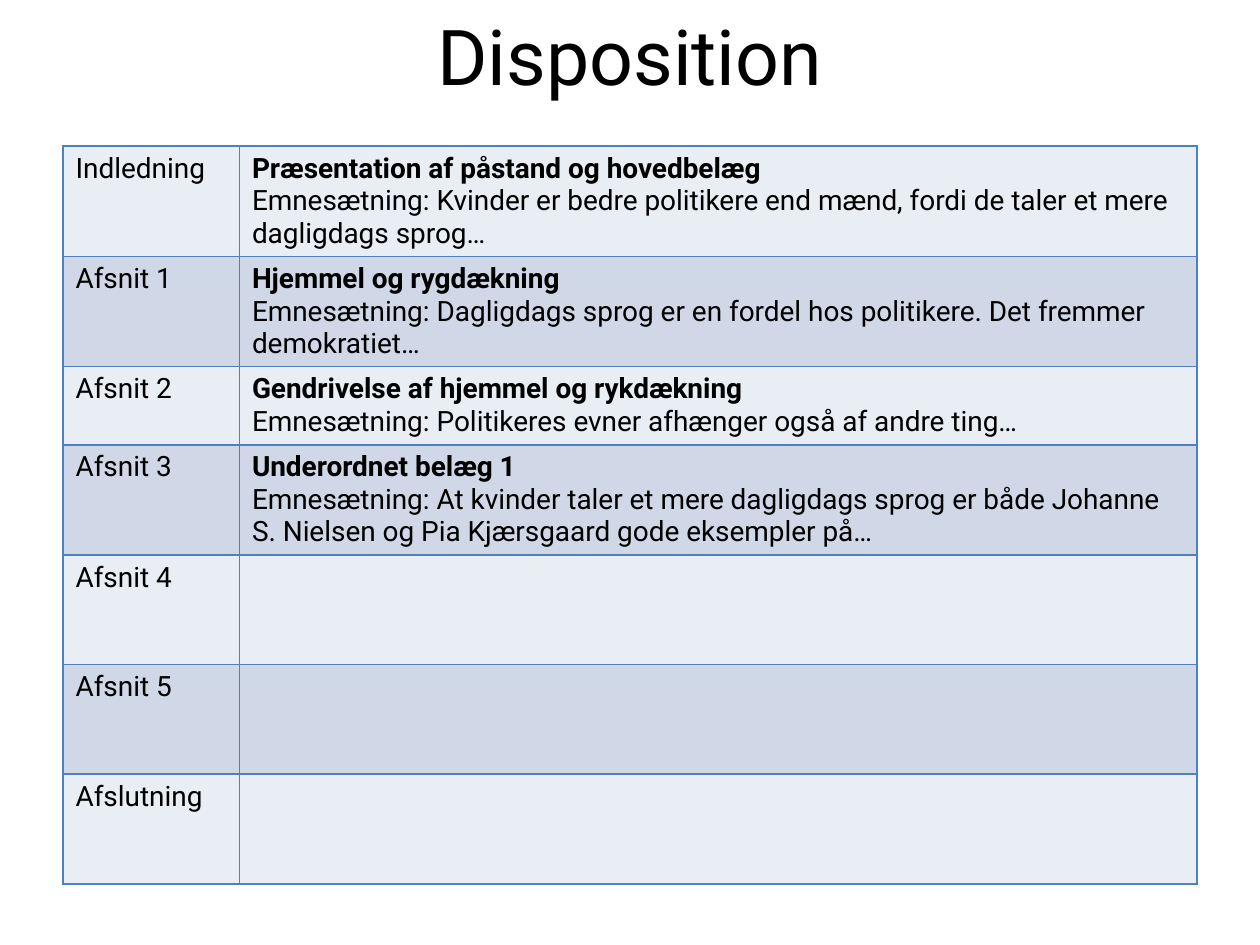
from pptx import Presentation
from pptx.dml.color import RGBColor
from pptx.enum.text import MSO_ANCHOR, PP_ALIGN
from pptx.oxml import parse_xml
from pptx.oxml.ns import nsdecls
from pptx.util import Inches, Pt

MIDDLE = MSO_ANCHOR.MIDDLE
CENTER = PP_ALIGN.CENTER
TITLE_ONLY = 5

FONT = "Roboto"
BLACK = RGBColor(0x00, 0x00, 0x00)
BORDER = RGBColor(0x4F, 0x81, 0xBD)
BANDS = (RGBColor(0xE9, 0xED, 0xF4), RGBColor(0xD0, 0xD8, 0xE8))

COLUMN_WIDTHS = (1.4, 7.6)
TALL_ROW, SHORT_ROW = 0.87, 0.62

# Section, row height, heading, topic sentence
SECTIONS = [
    ("Indledning", TALL_ROW, "Præsentation af påstand og hovedbelæg",
     "Emnesætning: Kvinder er bedre politikere end mænd, fordi de taler et mere dagligdags sprog…"),
    ("Afsnit 1", TALL_ROW, "Hjemmel og rygdækning",
     "Emnesætning: Dagligdags sprog er en fordel hos politikere. Det fremmer demokratiet…"),
    ("Afsnit 2", SHORT_ROW, "Gendrivelse af hjemmel og rykdækning",
     "Emnesætning: Politikeres evner afhænger også af andre ting…"),
    ("Afsnit 3", TALL_ROW, "Underordnet belæg 1",
     "Emnesætning: At kvinder taler et mere dagligdags sprog er både Johanne S. Nielsen "
     "og Pia Kjærsgaard gode eksempler på…"),
    ("Afsnit 4", TALL_ROW, "", ""),
    ("Afsnit 5", TALL_ROW, "", ""),
    ("Afslutning", TALL_ROW, "", ""),
]


def add_run(paragraph, text, size, bold=False):
    run = paragraph.add_run()
    run.text = text
    run.font.name = FONT
    run.font.size = Pt(size)
    run.font.bold = bold
    run.font.color.rgb = BLACK


def set_title(slide, text):
    title = slide.shapes.title
    title.left, title.top = Inches(0.5), Inches(0)
    title.width, title.height = Inches(9), Inches(0.87)
    title.text_frame.vertical_anchor = MIDDLE
    paragraph = title.text_frame.paragraphs[0]
    paragraph.alignment = CENTER
    add_run(paragraph, text, 44)


def style_cell(cell, color):
    properties = cell._tc.get_or_add_tcPr()
    for side in ("lnL", "lnR", "lnT", "lnB"):
        properties.append(parse_xml(
            f'<a:{side} {nsdecls("a")} w="{Pt(1)}"><a:solidFill>'
            f'<a:srgbClr val="{BORDER}"/></a:solidFill></a:{side}>'))
    cell.fill.solid()
    cell.fill.fore_color.rgb = color


def fill_content(cell, heading, topic):
    text_frame = cell.text_frame
    add_run(text_frame.paragraphs[0], heading, 16, bold=True)
    add_run(text_frame.add_paragraph(), topic, 16)


def add_outline_table(slide):
    height = sum(section[1] for section in SECTIONS)
    table = slide.shapes.add_table(
        len(SECTIONS), len(COLUMN_WIDTHS),
        Inches(0.5), Inches(1.16), Inches(sum(COLUMN_WIDTHS)), Inches(height)).table
    table.first_row = False
    for column, width in zip(table.columns, COLUMN_WIDTHS):
        column.width = Inches(width)
    for index, (name, row_height, heading, topic) in enumerate(SECTIONS):
        row = table.rows[index]
        row.height = Inches(row_height)
        for cell in row.cells:
            style_cell(cell, BANDS[index % 2])
        add_run(row.cells[0].text_frame.paragraphs[0], name, 16)
        if heading:
            fill_content(row.cells[1], heading, topic)


def main():
    presentation = Presentation()
    presentation.slide_width = Inches(10)
    presentation.slide_height = Inches(7.5)
    slide = presentation.slides.add_slide(presentation.slide_layouts[TITLE_ONLY])
    set_title(slide, "Disposition")
    add_outline_table(slide)
    presentation.save("out.pptx")


if __name__ == "__main__":
    main()
